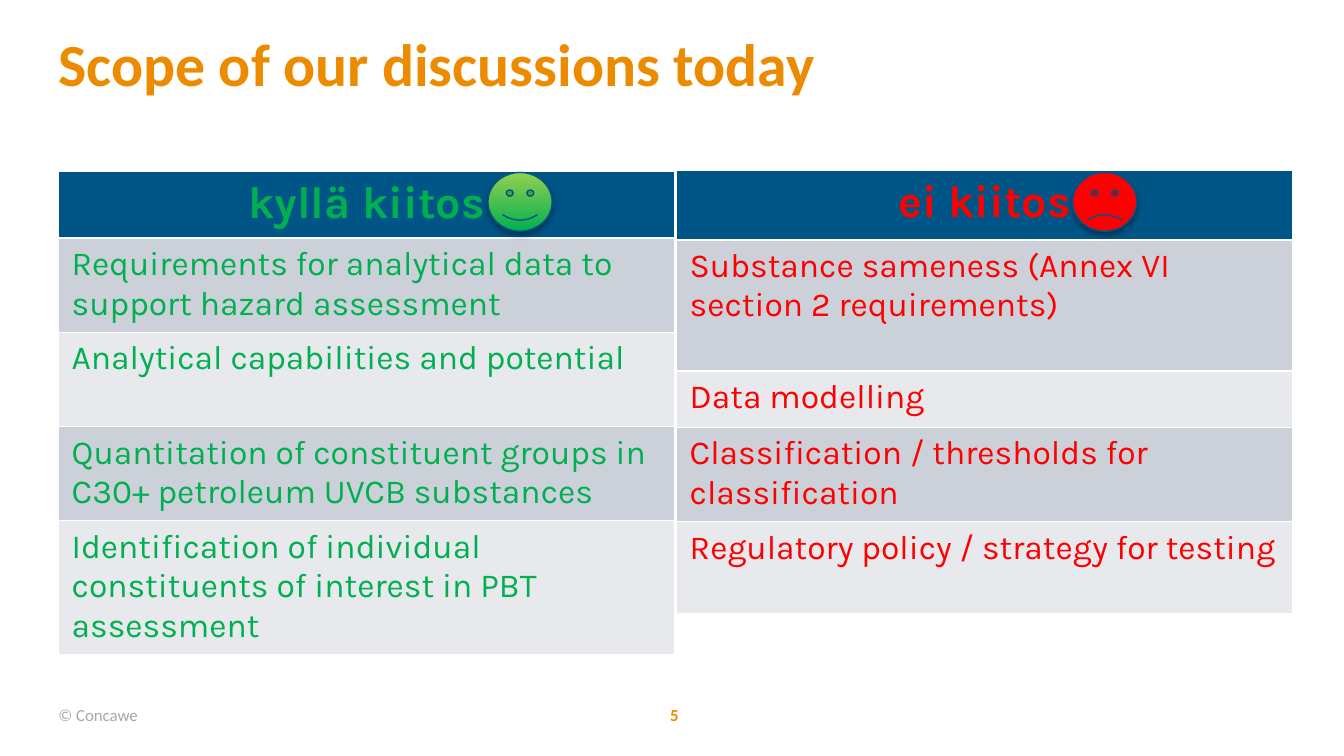
from lxml import etree
from pptx import Presentation
from pptx.dml.color import RGBColor
from pptx.enum.shapes import MSO_SHAPE
from pptx.enum.text import MSO_ANCHOR, PP_ALIGN
from pptx.oxml.ns import qn
from pptx.util import Pt

SMILEY = MSO_SHAPE.SMILEY_FACE
TOP, MIDDLE = MSO_ANCHOR.TOP, MSO_ANCHOR.MIDDLE
LEFT, CENTER = PP_ALIGN.LEFT, PP_ALIGN.CENTER

ORANGE, GREY = "ED8B00", "A7A8AA"
GREEN, LIME, RED = "00B050", "92D050", "FF0000"
HEADER_BLUE, OUTLINE_BLUE = "005587", "005384"
BANDS = ("CCD1D9", "E7E9ED")

WANTED = (
    "kyllä kiitos",
    "Requirements for analytical data to support hazard assessment",
    "Analytical capabilities and potential",
    "Quantitation of constituent groups in C30+ petroleum UVCB substances",
    "Identification of individual constituents of interest in PBT assessment",
)
UNWANTED = (
    "ei kiitos",
    "Substance sameness (Annex VI section 2 requirements)",
    "Data modelling",
    "Classification / thresholds for classification",
    "Regulatory policy / strategy for testing",
)


def color(value):
    """Turn a hex string into a colour."""
    return RGBColor.from_string(value)


def style_para(para, text, size, name, hue, bold=False, align=LEFT):
    """Fill a paragraph with text in one style."""
    para.text = text
    para.alignment = align
    para.font.size = Pt(size)
    para.font.name = name
    para.font.bold = bold
    para.font.color.rgb = color(hue)


def add_label(page, box, text, size, hue, bold=False, align=LEFT,
              anchor=TOP, insets=(0, 0, 7.2, 3.6)):
    """Place a single line of Calibri text in a box."""
    frame = page.shapes.add_textbox(*map(Pt, box)).text_frame
    frame.word_wrap = True
    frame.vertical_anchor = anchor
    (frame.margin_left, frame.margin_top,
     frame.margin_right, frame.margin_bottom) = map(Pt, insets)
    style_para(frame.paragraphs[0], text, size, "Calibri", hue, bold, align)


def add_topics(page, box, topics, heights, hue):
    """Place a one-column table with a header and banded topic rows."""
    left, top, width = box
    table = page.shapes.add_table(len(topics), 1, Pt(left), Pt(top),
                                  Pt(width), Pt(sum(heights))).table
    for index, (topic, height) in enumerate(zip(topics, heights)):
        header = index == 0
        table.rows[index].height = Pt(height)
        cell = table.cell(index, 0)
        cell.fill.solid()
        cell.fill.fore_color.rgb = color(
            HEADER_BLUE if header else BANDS[(index - 1) % 2])
        style_para(cell.text_frame.paragraphs[0], topic, 24 if header else 18,
                   "Karla", hue, header, CENTER if header else LEFT)


def add_shadow(shape):
    """Give a shape a soft shadow straight below it."""
    shape.shadow.inherit = False
    effects = shape._element.spPr.find(qn("a:effectLst"))
    shadow = etree.SubElement(effects, qn("a:outerShdw"), blurRad=str(Pt(3.1)),
                              dist=str(Pt(1.8)), dir="5400000", rotWithShape="0")
    black = etree.SubElement(shadow, qn("a:srgbClr"), val="000000")
    etree.SubElement(black, qn("a:alpha"), val="35000")


def add_face(page, box, curve, hues):
    """Place a face whose mouth follows curve, filled from bottom to top."""
    face = page.shapes.add_shape(SMILEY, *map(Pt, box))
    face.adjustments[0] = curve
    if len(hues) == 1:
        face.fill.solid()
        face.fill.fore_color.rgb = color(hues[0])
    else:
        face.fill.gradient()
        face.fill.gradient_angle = 90
        for stop, hue in zip(face.fill.gradient_stops, hues):
            stop.color.rgb = color(hue)
    face.line.color.rgb = color(OUTLINE_BLUE)
    face.line.width = Pt(0.75)
    add_shadow(face)


def add_footer(page, left, top):
    """Place the copyright line and the page number."""
    add_label(page, (left, top, 63.4, 14.4), "© Concawe", 9, GREY,
              anchor=MIDDLE)
    add_label(page, (left + 316, top, 28.1, 10.8), "5", 9, ORANGE, True,
              CENTER, MIDDLE, (0, 0, 0, 0))


def build_scope_page(deck):
    """Build the slide that sets wanted topics against unwanted ones."""
    page = deck.slides.add_slide(deck.slide_layouts[6])
    margin, width = 31.2, 330.5
    add_label(page, (margin, 14.4, 661, 42.5),
              "Scope of our discussions today", 32, ORANGE, True)
    add_topics(page, (margin, 91.6, width), WANTED,
               (36, 50.4, 50.4, 50.4, 71.8), GREEN)
    add_topics(page, (margin + width + 0.6, 91, width), UNWANTED,
               (37.5, 70.3, 30.2, 49.3, 49.3), RED)
    add_face(page, (261.4, 92.4, 34.4, 31.5), 0.05, (GREEN, LIME))
    add_face(page, (574.6, 92.4, 34.4, 31.5), -0.05, (RED,))
    add_footer(page, margin, 377.3)


def main():
    """Create the deck and save it."""
    deck = Presentation()
    deck.slide_width, deck.slide_height = Pt(720), Pt(405)
    build_scope_page(deck)
    deck.save("out.pptx")


if __name__ == "__main__":
    main()
